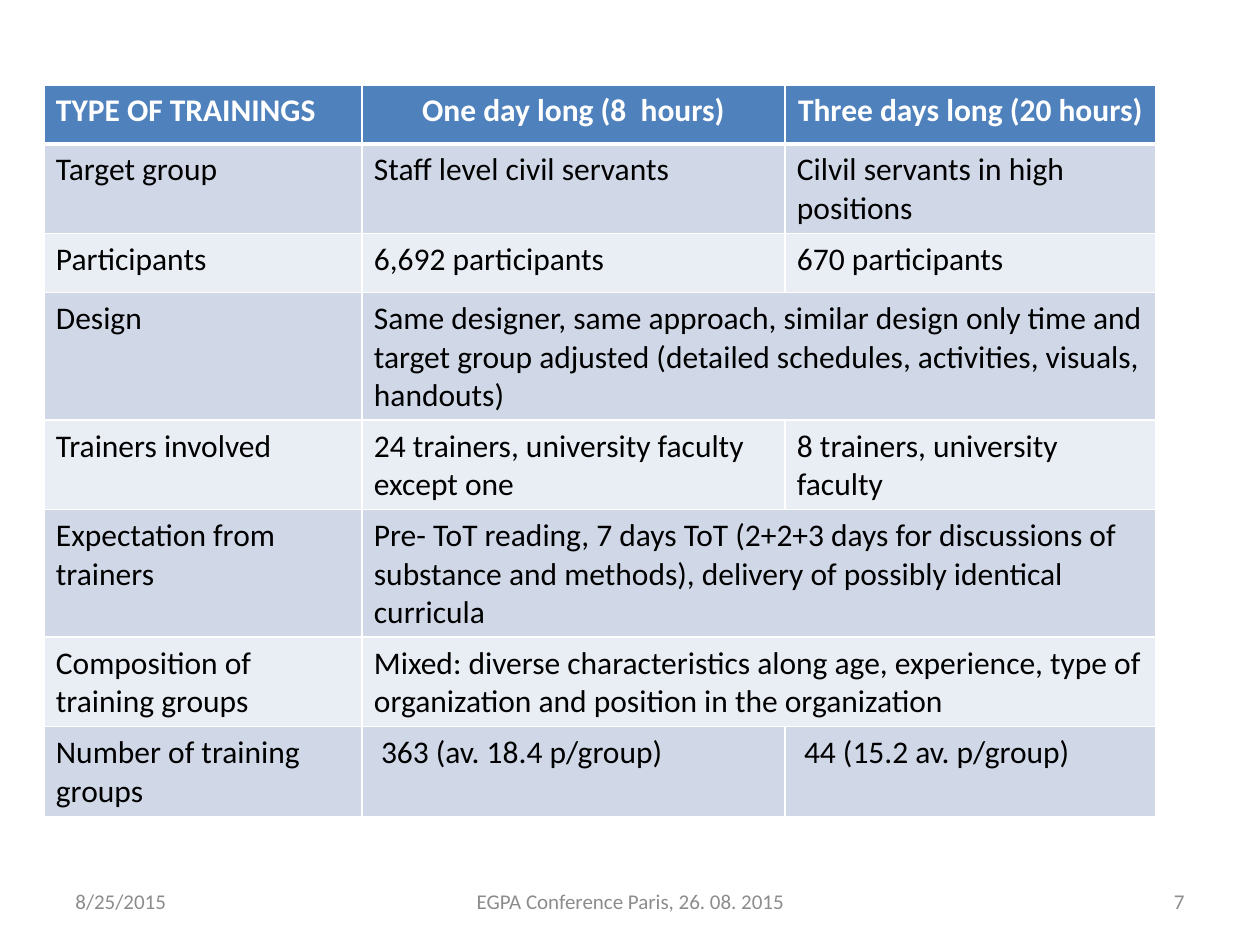
"""Build a slide comparing two types of trainings in a table."""
from lxml.etree import SubElement
from pptx import Presentation
from pptx.dml.color import RGBColor
from pptx.enum.text import MSO_ANCHOR as Anchor, PP_ALIGN as Align
from pptx.oxml.ns import qn
from pptx.util import Pt

HEADINGS = ["TYPE OF TRAININGS", "One day long (8  hours)", "Three days long (20 hours)"]
TOPICS = [
    ("Target group", "Staff level civil servants", "Cilvil servants in high positions"),
    ("Participants", "6,692 participants", "670 participants"),
    ("Design", "Same designer, same approach, similar design only time and target group "
               "adjusted (detailed schedules, activities, visuals, handouts)"),
    ("Trainers involved", "24 trainers, university faculty except one",
     "8 trainers, university faculty"),
    ("Expectation from trainers", "Pre- ToT reading, 7 days ToT (2+2+3 days for discussions of "
                                  "substance and methods), delivery of possibly identical curricula"),
    ("Composition of training groups", "Mixed: diverse characteristics along age, experience, "
                                       "type of organization and position in the organization"),
    ("Number of training groups", " 363 (av. 18.4 p/group)", " 44 (15.2 av. p/group)"),
]
FOOTERS = [
    ("8/25/2015", 63, 294, Align.LEFT),
    ("EGPA Conference Paris, 26. 08. 2015", 431, 399, Align.CENTER),
    ("7", 903, 294, Align.RIGHT),
]
COLUMNS = [318, 423, 371]
ROW_HEIGHT = 59
TABLE_LEFT, TABLE_TOP = 44, 85
MARGINS = {"margin_left": 12, "margin_right": 12, "margin_top": 7, "margin_bottom": 7}
FOOTER_TOP, FOOTER_HEIGHT = 876, 50
HEADER_FILL, BANDS = "4F81BD", ["D0D8E8", "E9EDF4"]
HEADER_FONT = {"size": Pt(18), "bold": True, "color": "FFFFFF"}
BODY_FONT = {"size": Pt(18), "bold": False, "color": "000000"}
FOOTER_FONT = {"size": Pt(12), "color": "8C8C8C"}


def px(length):
    return round(length * 914400 / 126)


def rgb(code):
    return RGBColor.from_string(code)


def write(frame, wording, style, align):
    paragraph = frame.paragraphs[0]
    paragraph.alignment = align
    run = paragraph.add_run()
    run.text = wording
    run.font.name = "Calibri"
    for name, value in style.items():
        if name == "color":
            run.font.color.rgb = rgb(value)
        else:
            setattr(run.font, name, value)


def add_borders(cell, top, bottom):
    properties = cell._tc.get_or_add_tcPr()
    for side, width in {"lnL": 1, "lnR": 1, "lnT": top, "lnB": bottom}.items():
        line = SubElement(properties, qn(f"a:{side}"), w=str(Pt(width)))
        SubElement(SubElement(line, qn("a:solidFill")), qn("a:srgbClr"), val="FFFFFF")


def add_trainings(slide):
    rows = [HEADINGS, *TOPICS]
    table = slide.shapes.add_table(
        len(rows), len(COLUMNS), px(TABLE_LEFT), px(TABLE_TOP),
        px(sum(COLUMNS)), px(ROW_HEIGHT * len(rows))).table
    for column, width in zip(table.columns, COLUMNS):
        column.width = px(width)
    for r, wordings in enumerate(rows):
        header = r == 0
        for c in range(len(COLUMNS)):
            cell = table.cell(r, c)
            for name, margin in MARGINS.items():
                setattr(cell, name, px(margin))
            add_borders(cell, 3 if r == 1 else 1, 3 if header else 1)
            cell.fill.solid()
            cell.fill.fore_color.rgb = rgb(HEADER_FILL if header else BANDS[(r - 1) % 2])
        if len(wordings) < len(COLUMNS):
            table.cell(r, 1).merge(table.cell(r, 2))
        for c, wording in enumerate(wordings):
            write(table.cell(r, c).text_frame, wording, HEADER_FONT if header else BODY_FONT,
                  Align.CENTER if header and c else Align.LEFT)


def add_footers(slide):
    for wording, left, width, align in FOOTERS:
        frame = slide.shapes.add_textbox(
            px(left), px(FOOTER_TOP), px(width), px(FOOTER_HEIGHT)).text_frame
        frame.word_wrap = True
        frame.vertical_anchor = Anchor.MIDDLE
        write(frame, wording, FOOTER_FONT, align)


def main():
    deck = Presentation()
    deck.slide_width, deck.slide_height = px(1260), px(945)
    slide = deck.slides.add_slide(deck.slide_layouts[6])
    add_footers(slide)
    add_trainings(slide)
    deck.save("out.pptx")


if __name__ == "__main__":
    main()
